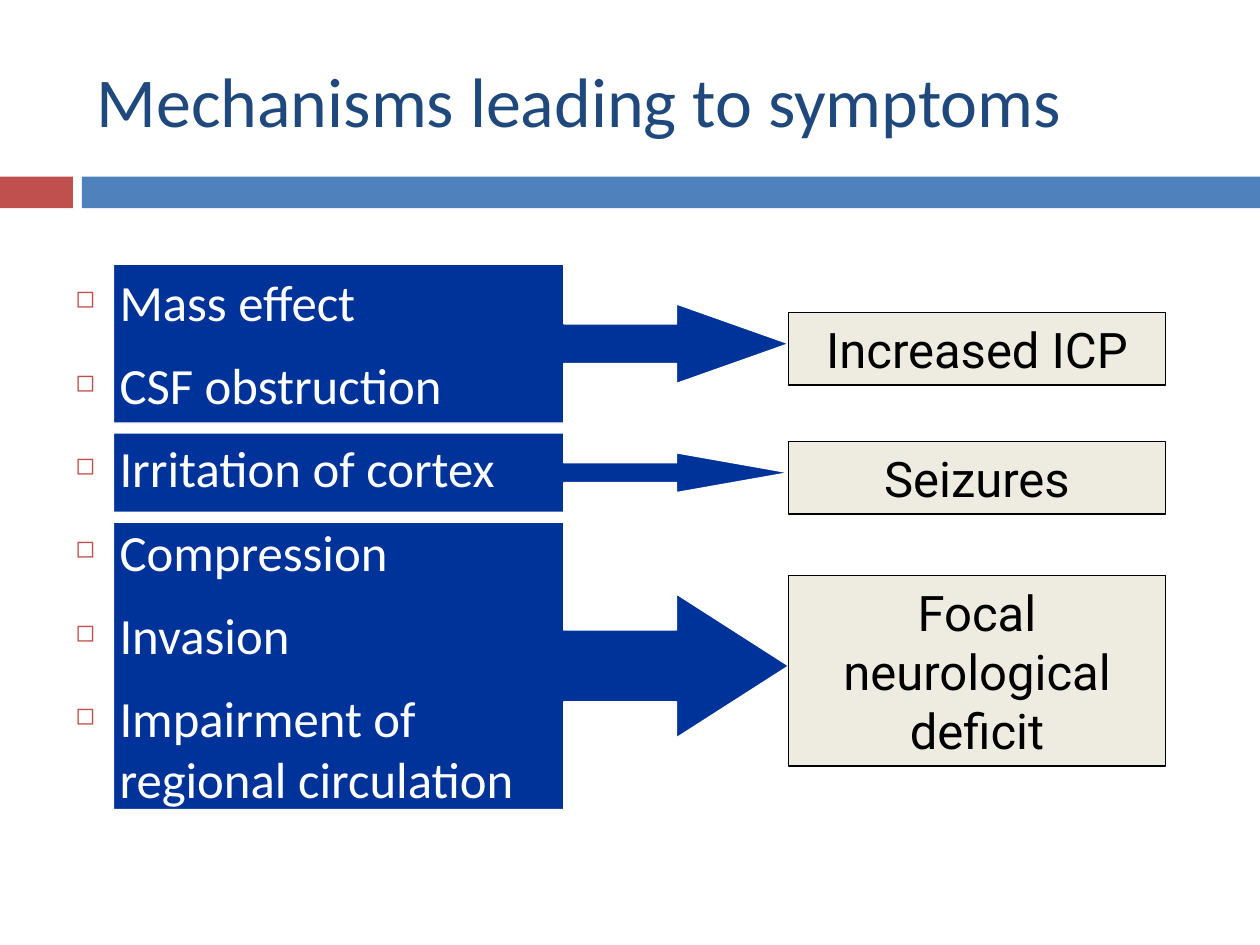
from dataclasses import dataclass

from lxml import etree
from pptx import Presentation
from pptx.dml.color import RGBColor
from pptx.enum.shapes import MSO_SHAPE
from pptx.enum.text import MSO_ANCHOR, PP_ALIGN
from pptx.oxml.ns import qn
from pptx.util import Cm, Pt

RECTANGLE = MSO_SHAPE.RECTANGLE
ARROW_CALLOUT = MSO_SHAPE.RIGHT_ARROW_CALLOUT
TOP, MIDDLE = MSO_ANCHOR.TOP, MSO_ANCHOR.MIDDLE
LEFT, CENTER = PP_ALIGN.LEFT, PP_ALIGN.CENTER


@dataclass(frozen=True)
class Theme:
    accent: str = "C0504D"
    bar: str = "4F81BD"
    title: str = "1F497D"
    callout: str = "003399"
    effect: str = "EEECE1"
    light: str = "FFFFFF"
    dark: str = "000000"
    main_font: str = "Calibri"
    effect_font: str = "Roboto"
    title_size: float = 40
    body_size: float = 29
    effect_size: float = 28
    outline: float = 0.75


def color(value):
    return RGBColor.from_string(value)


def add_bullet(paragraph, bullet_color, indent=0.89):
    properties = paragraph._p.get_or_add_pPr()
    properties.set("marL", str(Cm(indent)))
    properties.set("indent", str(-Cm(indent)))
    bullet = etree.SubElement(properties, qn("a:buClr"))
    etree.SubElement(bullet, qn("a:srgbClr"), val=bullet_color)
    etree.SubElement(properties, qn("a:buSzPct"), val="48000")
    etree.SubElement(properties, qn("a:buChar"), char="◻")


def write_text(shape, lines, font, size, text_color, align=LEFT, anchor=TOP,
               bullet_color=None, before=0, after=0):
    frame = shape.text_frame
    frame.word_wrap = True
    frame.vertical_anchor = anchor
    for index, line in enumerate(lines):
        paragraph = frame.add_paragraph() if index else frame.paragraphs[0]
        if bullet_color:
            add_bullet(paragraph, bullet_color)
        paragraph.alignment = align
        paragraph.space_before = Pt(before if index else 0)
        paragraph.space_after = Pt(after)
        run = paragraph.add_run()
        run.text = line
        run.font.name = font
        run.font.size = Pt(size)
        run.font.color.rgb = color(text_color)


class SlideBuilder:
    def __init__(self, slide, theme):
        self.slide = slide
        self.theme = theme

    def shape(self, kind, left, top, width, height, fill, line=None):
        shape = self.slide.shapes.add_shape(
            kind, Cm(left), Cm(top), Cm(width), Cm(height))
        shape.shadow.inherit = False
        shape.fill.solid()
        shape.fill.fore_color.rgb = color(fill)
        if line:
            shape.line.color.rgb = color(line)
            shape.line.width = Pt(self.theme.outline)
        else:
            shape.line.fill.background()
        return shape

    def text(self, left, top, width, height, lines, **style):
        box = self.slide.shapes.add_textbox(
            Cm(left), Cm(top), Cm(width), Cm(height))
        write_text(box, lines, self.theme.main_font, **style)

    def callout(self, left, top, width, height, head_length=2.26):
        callout = self.shape(ARROW_CALLOUT, left, top, width, height,
                             self.theme.callout, self.theme.light)
        for index, value in enumerate((0.25, 0.25, head_length / height, 0.667)):
            callout.adjustments[index] = value

    def effect(self, left, top, width, height, label):
        box = self.shape(RECTANGLE, left, top, width, height,
                         self.theme.effect, self.theme.dark)
        write_text(box, [label], self.theme.effect_font, self.theme.effect_size,
                   self.theme.dark, align=CENTER, anchor=MIDDLE)


def main():
    theme = Theme()
    presentation = Presentation()
    presentation.slide_width, presentation.slide_height = Cm(25.4), Cm(19.05)
    slide = presentation.slides.add_slide(presentation.slide_layouts[6])
    builder = SlideBuilder(slide, theme)

    builder.shape(RECTANGLE, 0, 3.56, 1.47, 0.64, theme.accent)
    builder.shape(RECTANGLE, 1.65, 3.56, 23.75, 0.64, theme.bar)
    builder.text(1.7, 0.64, 22.43, 2.74, ["Mechanisms leading to symptoms"],
                 size=theme.title_size, text_color=theme.title, anchor=MIDDLE)

    groups = [
        (3.2, 1.47, "Increased ICP", ["Mass effect", "CSF obstruction"]),
        (1.6, 1.47, "Seizures", ["Irritation of cortex"]),
        (5.79, 3.84, "Focal neurological deficit",
         ["Compression", "Invasion", "Impairment of regional circulation"]),
    ]
    callout_left, callout_width, first_top = 2.29, 13.61, 5.33
    gap, effect_drop = 0.2, 0.1
    top = first_top
    for height, effect_height, label, _ in groups:
        builder.callout(callout_left, top, callout_width, height)
        effect_top = top + (height - effect_height) / 2 + effect_drop
        builder.effect(callout_left + callout_width, effect_top,
                       7.59, effect_height, label)
        top += height + gap

    mechanisms = [name for group in groups for name in group[3]]
    builder.text(1.27, first_top, 10.1, 11.68, mechanisms,
                 size=theme.body_size, text_color=theme.light,
                 bullet_color=theme.accent, before=7, after=5.8)

    presentation.save("out.pptx")


if __name__ == "__main__":
    main()
